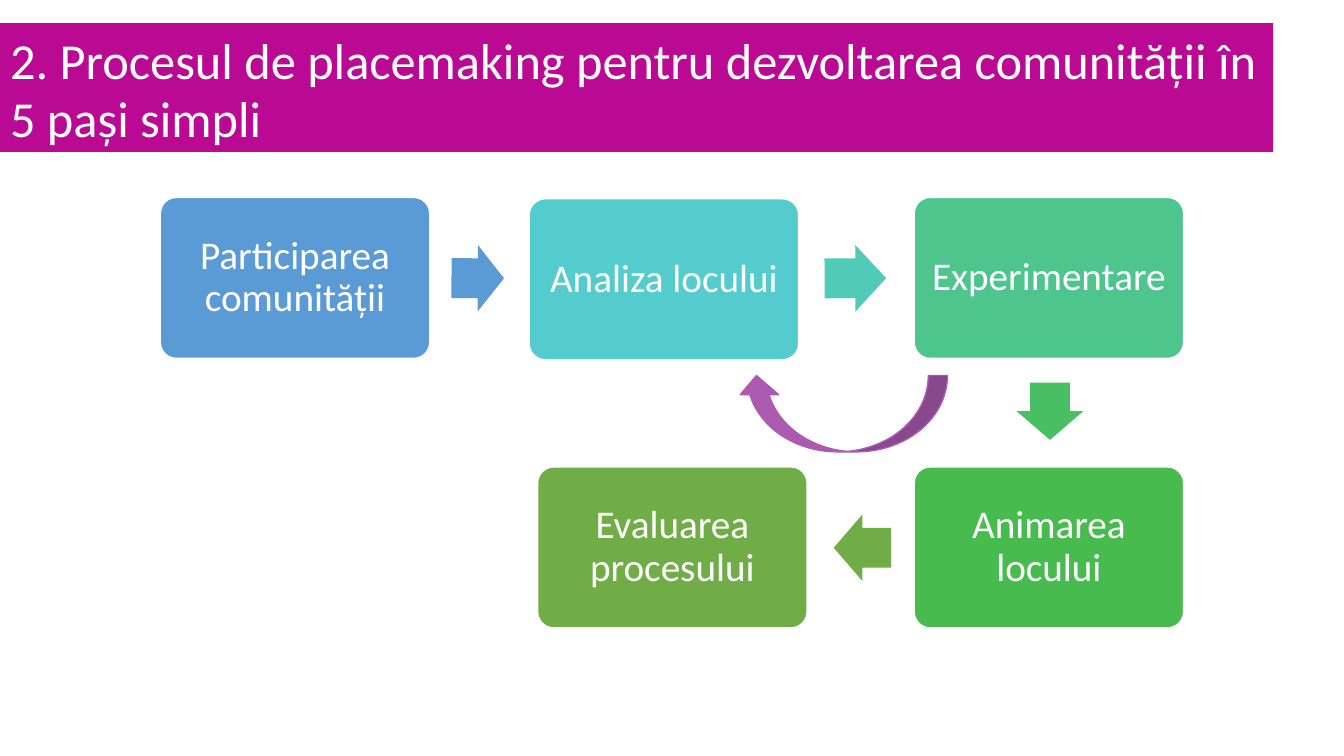
from pptx import Presentation
from pptx.dml.color import RGBColor
from pptx.enum.shapes import MSO_SHAPE
from pptx.enum.text import MSO_ANCHOR, MSO_AUTO_SIZE, PP_ALIGN
from pptx.util import Pt

WHITE = RGBColor(0xFF, 0xFF, 0xFF)
MAGENTA = RGBColor(0xBA, 0x0A, 0x94)
BLUE = RGBColor(0x5B, 0x9B, 0xD5)
TURQUOISE = RGBColor(0x54, 0xCC, 0xCD)
TEAL = RGBColor(0x52, 0xCA, 0xB8)
MINT = RGBColor(0x4D, 0xC5, 0x8D)
EMERALD = RGBColor(0x49, 0xBF, 0x64)
GREEN = RGBColor(0x48, 0xBB, 0x4F)
OLIVE = RGBColor(0x70, 0xAD, 0x47)
PURPLE = RGBColor(0xAB, 0x5A, 0xB0)

STEP_W, STEP_H = 192.5, 115


def add_filled(kind, x, y, w, h, fill, line=None):
    sp = s.shapes.add_shape(kind, Pt(x), Pt(y), Pt(w), Pt(h))
    sp.shadow.inherit = False
    sp.fill.solid()
    sp.fill.fore_color.rgb = fill
    if line is None:
        sp.line.fill.background()
    else:
        sp.line.color.rgb = line
        sp.line.width = Pt(1)
    return sp


def write_text(sp, text, size, frame_format, paragraph_format):
    tf = sp.text_frame
    for name, value in frame_format.items():
        setattr(tf, name, value)
    p = tf.paragraphs[0]
    for name, value in paragraph_format.items():
        setattr(p, name, value)
    r = p.add_run()
    r.text = text
    font_format = {"name": "Calibri", "size": Pt(size), "bold": False}
    for name, value in font_format.items():
        setattr(r.font, name, value)
    r.font.color.rgb = WHITE


prs = Presentation()
prs.slide_width, prs.slide_height = Pt(960), Pt(540)
s = prs.slides.add_slide(prs.slide_layouts[5])

# Title band
title = s.shapes.title
title.left, title.top, title.width, title.height = Pt(0), Pt(16.5), Pt(909.5), Pt(92)
title.fill.solid()
title.fill.fore_color.rgb = MAGENTA
write_text(
    title, "2. Procesul de placemaking pentru dezvoltarea comunității în 5 pași simpli", 36,
    {"word_wrap": True, "auto_size": MSO_AUTO_SIZE.NONE, "vertical_anchor": MSO_ANCHOR.TOP,
     "margin_left": Pt(7.2), "margin_right": Pt(7.2), "margin_top": Pt(6.5), "margin_bottom": Pt(0)},
    {"alignment": PP_ALIGN.LEFT, "line_spacing": 0.97, "space_before": Pt(0)})

# Five steps
steps = [
    ("Participarea comunității", 114.5, 141, BLUE),
    ("Analiza locului", 378, 142, TURQUOISE),
    ("Experimentare", 653, 141, MINT),
    ("Animarea locului", 653, 333.5, GREEN),
    ("Evaluarea procesului", 384, 333.5, OLIVE),
]
step_frame = {"word_wrap": True, "vertical_anchor": MSO_ANCHOR.MIDDLE}
for side in ("left", "right", "top", "bottom"):
    step_frame["margin_" + side] = Pt(8.4)
for text, x, y, fill in steps:
    sp = add_filled(MSO_SHAPE.ROUNDED_RECTANGLE, x, y, STEP_W, STEP_H, fill, WHITE)
    sp.adjustments[0] = 0.1
    write_text(sp, text, 28, step_frame, {"alignment": PP_ALIGN.CENTER, "line_spacing": 0.9})

# Arrows from each step to the next
arrows = [
    (322.5, 175, 37.5, 0.2, BLUE),
    (589, 175, 44, -0.2, TEAL),
    (729.5, 270, 41, 90, EMERALD),
    (595.5, 367.5, 41, 180, OLIVE),
]
for x, y, w, rotation, fill in arrows:
    sp = add_filled(MSO_SHAPE.RIGHT_ARROW, x, y, w, 47.5, fill)
    sp.adjustments[0], sp.adjustments[1] = 0.6, 0.5
    sp.rotation = rotation

# Loop back from experiment to analysis
loop = add_filled(MSO_SHAPE.CURVED_LEFT_ARROW, 574.5, 220.5, 54.5, 150, PURPLE, PURPLE)
loop.rotation = 90

prs.save("out.pptx")
